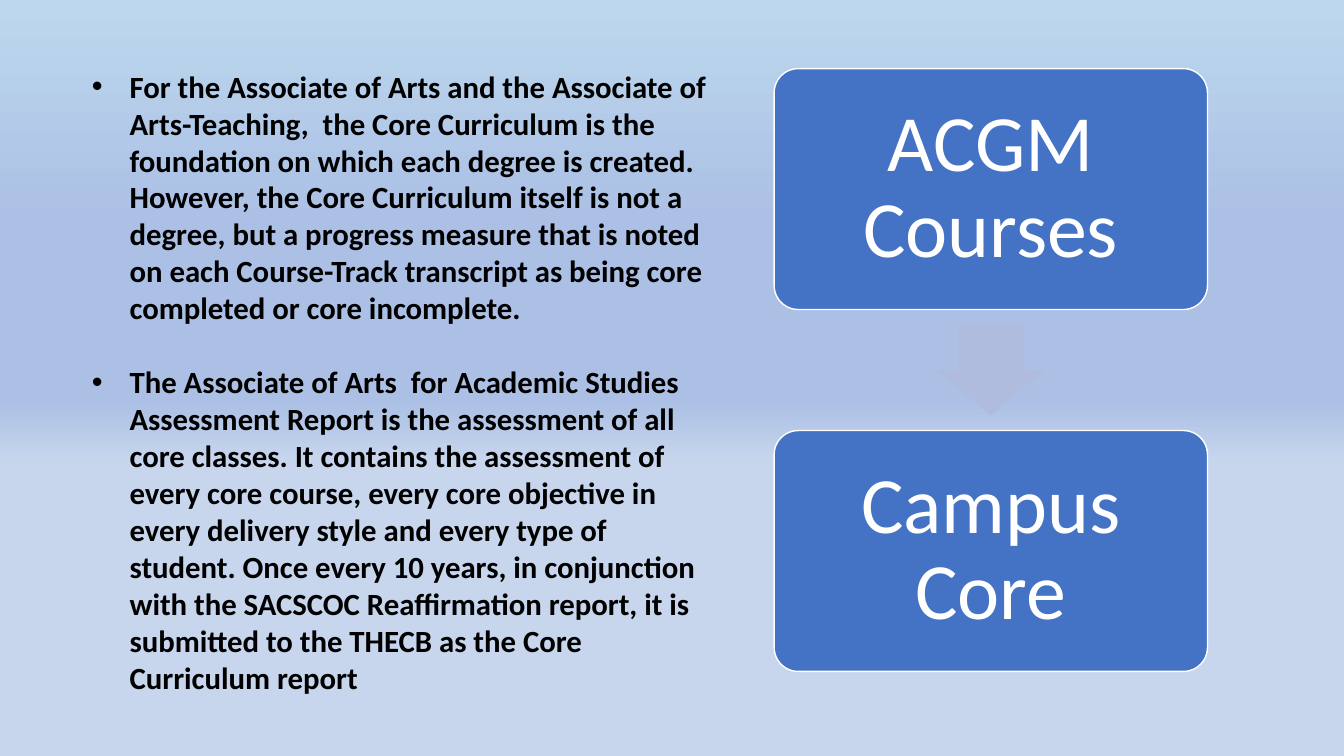
from lxml import etree
from pptx import Presentation
from pptx.dml.color import RGBColor
from pptx.enum.shapes import MSO_SHAPE
from pptx.enum.text import MSO_ANCHOR, MSO_AUTO_SIZE, PP_ALIGN
from pptx.oxml.ns import qn
from pptx.util import Cm, Pt

ROUNDED = MSO_SHAPE.ROUNDED_RECTANGLE
DOWN_ARROW = MSO_SHAPE.DOWN_ARROW
TOP, MIDDLE = MSO_ANCHOR.TOP, MSO_ANCHOR.MIDDLE
NO_AUTOFIT = MSO_AUTO_SIZE.NONE
LEFT, CENTER = PP_ALIGN.LEFT, PP_ALIGN.CENTER

BLACK = RGBColor(0x00, 0x00, 0x00)
WHITE = RGBColor(0xFF, 0xFF, 0xFF)
BLUE = RGBColor(0x44, 0x72, 0xC4)
PALE_MAUVE = RGBColor(0xB0, 0xBC, 0xDE)
SKY = RGBColor(0xBD, 0xD7, 0xEE)
PERIWINKLE = RGBColor(0xAB, 0xC0, 0xE4)
MIST = RGBColor(0xC7, 0xD5, 0xED)

BACKGROUND_STOPS = [(0, SKY), (30, PERIWINKLE), (53, PERIWINKLE), (61, MIST)]

BULLETS = [
    "For the Associate of Arts and the Associate of Arts-Teaching,  the Core "
    "Curriculum is the foundation on which each degree is created. However, the "
    "Core Curriculum itself is not a degree, but a progress measure that is noted "
    "on each Course-Track transcript as being core completed or core incomplete.",
    "The Associate of Arts  for Academic Studies Assessment Report is the "
    "assessment of all core classes. It contains the assessment of every core "
    "course, every core objective in every delivery style and every type of "
    "student. Once every 10 years, in conjunction with the SACSCOC Reaffirmation "
    "report, it is submitted to the THECB as the Core Curriculum report",
]
STEPS = ["ACGM Courses", "Campus Core"]


class SlideBuilder:
    font_name = "Calibri"
    bullet_size = Pt(22)
    step_size = Pt(57)

    def __init__(self, slide):
        self.slide = slide

    def background(self, stops):
        fill = self.slide.background.fill
        fill.gradient()
        fill.gradient_angle = 270
        stop_list = fill.gradient_stops[0]._gs.getparent()
        for old_stop in list(stop_list):
            stop_list.remove(old_stop)
        for percent, color in stops:
            stop = etree.SubElement(stop_list, qn("a:gs"), pos=str(percent * 1000))
            etree.SubElement(stop, qn("a:srgbClr"), val=str(color))

    def run(self, paragraph, text, size, color, bold=False):
        run = paragraph.add_run()
        run.text = text
        run.font.name = self.font_name
        run.font.size = size
        run.font.bold = bold
        run.font.color.rgb = color

    def bullets(self, texts, left, top, width, height):
        body = self.slide.placeholders[1]
        body.left, body.top, body.width, body.height = left, top, width, height
        frame = body.text_frame
        frame.word_wrap = True
        frame.auto_size = NO_AUTOFIT
        frame.vertical_anchor = TOP
        for index, text in enumerate(texts):
            paragraph = frame.add_paragraph() if index else frame.paragraphs[0]
            paragraph.alignment = LEFT
            paragraph.space_before = Pt(26.5) if index else Pt(0)
            self.run(paragraph, text, self.bullet_size, BLACK, bold=True)

    def block(self, preset, adjustments, left, top, width, height, fill):
        shape = self.slide.shapes.add_shape(preset, left, top, width, height)
        for index, value in enumerate(adjustments):
            shape.adjustments[index] = value
        shape.shadow.inherit = False
        shape.fill.solid()
        shape.fill.fore_color.rgb = fill
        shape.line.fill.background()
        return shape

    def step(self, text, left, top, width, height):
        shape = self.block(ROUNDED, [0.1], left, top, width, height, BLUE)
        shape.line.color.rgb = WHITE
        shape.line.width = Pt(1)
        frame = shape.text_frame
        frame.word_wrap = True
        frame.vertical_anchor = MIDDLE
        frame.margin_left = frame.margin_right = Cm(0.8)
        frame.margin_top = frame.margin_bottom = Cm(0.8)
        paragraph = frame.paragraphs[0]
        paragraph.alignment = CENTER
        paragraph.line_spacing = 0.9
        self.run(paragraph, text, self.step_size, WHITE)

    def arrow(self, left, top, width, height):
        self.block(DOWN_ARROW, [0.6, 0.5], left, top, width, height, PALE_MAUVE)


def main():
    presentation = Presentation()
    presentation.slide_width, presentation.slide_height = Cm(33.87), Cm(19.05)
    slide = presentation.slides.add_slide(presentation.slide_layouts[1])
    title = slide.shapes.title.element
    title.getparent().remove(title)
    builder = SlideBuilder(slide)

    # Background and bullet list
    builder.background(BACKGROUND_STOPS)
    builder.bullets(BULLETS, Cm(2.06), Cm(1.57), Cm(16.23), Cm(16.6))

    # Steps, with an arrow centred in each gap
    left, top, width, height = Cm(19.51), Cm(1.73), Cm(10.92), Cm(6.07)
    gap = Cm(3.05)
    arrow_width, arrow_height = Cm(2.72), Cm(2.29)
    for index, text in enumerate(STEPS):
        step_top = top + index * (height + gap)
        if index:
            builder.arrow(left + (width - arrow_width) // 2,
                          step_top - (gap + arrow_height) // 2,
                          arrow_width, arrow_height)
        builder.step(text, left, step_top, width, height)

    presentation.save("out.pptx")


if __name__ == "__main__":
    main()
